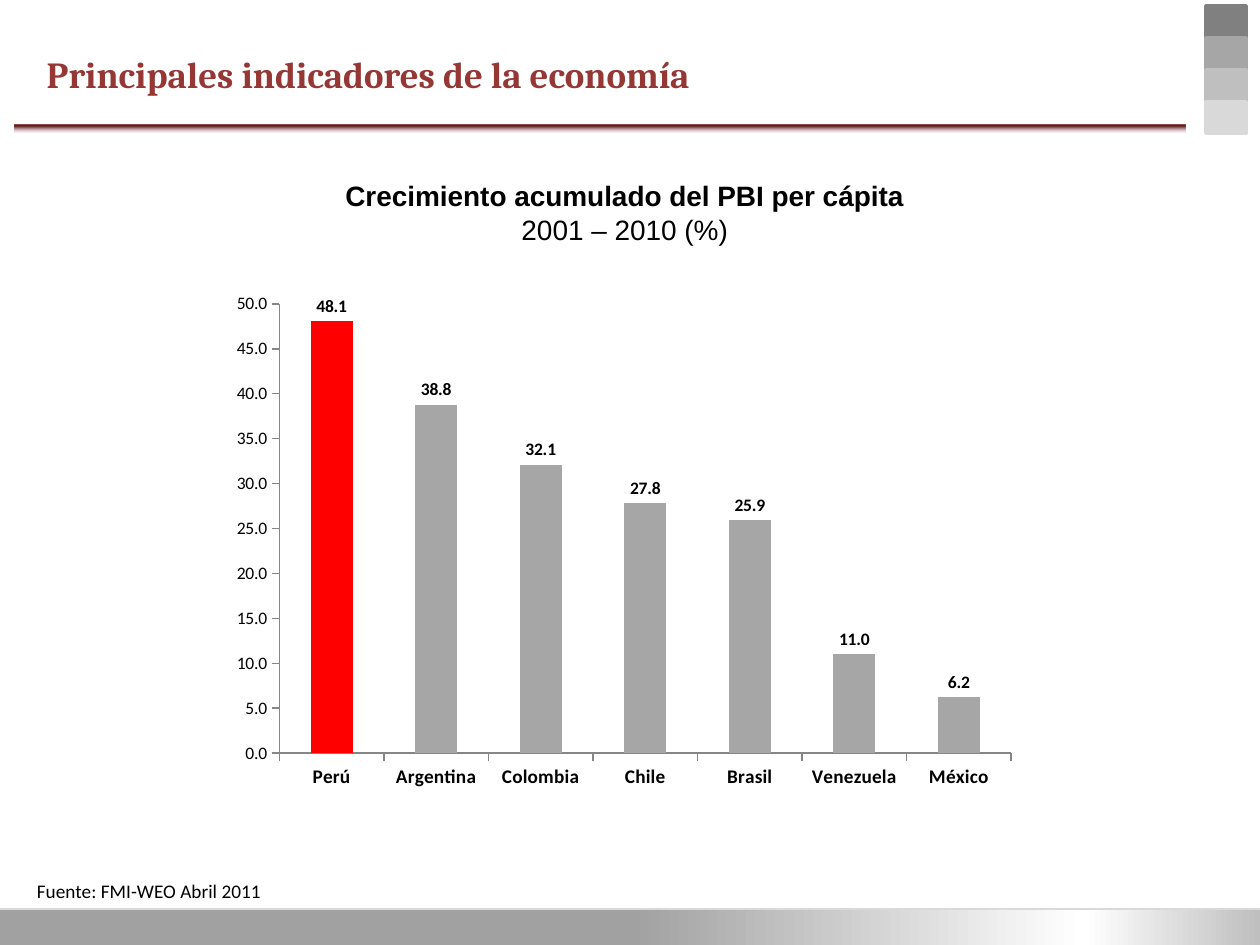
from lxml import etree
from pptx import Presentation
from pptx import util as u
from pptx.chart.data import CategoryChartData
from pptx.dml.color import RGBColor
from pptx.enum import chart as kinds, shapes, text
from pptx.oxml import parse_xml
from pptx.oxml.ns import nsdecls, qn

COLORS = {
    "text": "000000", "title": "953735", "peru": "FF0000", "bar": "A6A6A6",
    "axis": "868686", "rule": "D9D9D9",
}
SQUARES = ["808080", "A6A6A6", "BFBFBF", "D9D9D9"]
FOOTER_STOPS = [(50, "A1A1A1", 100), (86, "FFFFFF", 100), (100, "BFBFBF", 100)]
TITLE_STOPS = [(23, "632523", 100), (97, "FFEBFA", 43), (100, "85C2FF", 100)]
GROWTH = {
    "Perú": 48.1, "Argentina": 38.8, "Colombia": 32.1, "Chile": 27.8,
    "Brasil": 25.9, "Venezuela": 11.0, "México": 6.2,
}
PLOT_AREA = {"x": 0.07, "y": 0.04, "w": 0.91, "h": 0.87}


def rgb(name):
    return RGBColor.from_string(COLORS.get(name, name))


class SlideBuilder:
    def __init__(self, slide):
        self.slide = slide

    def style(self, font, size, face, color="text", bold=False):
        font.size, font.name, font.bold = u.Pt(size), face, bold
        font.color.rgb = rgb(color)

    def place(self, shape, left, top, width, height):
        shape.left, shape.top = u.Pt(left), u.Pt(top)
        shape.width, shape.height = u.Pt(width), u.Pt(height)

    def rectangle(self, left, top, width, height):
        shape = self.slide.shapes.add_shape(
            shapes.MSO_SHAPE.RECTANGLE, *map(u.Pt, (left, top, width, height)))
        shape.shadow.inherit = False
        shape.line.fill.background()
        return shape

    def square(self, left, top, width, height, color):
        shape = self.rectangle(left, top, width, height)
        shape.fill.solid()
        shape.fill.fore_color.rgb = rgb(color)
        shape.line.color.rgb = rgb(color)
        shape.line.width = u.Pt(2)

    def gradient_bar(self, left, top, width, height, stops, angle):
        shape = self.rectangle(left, top, width, height)
        shape.fill.gradient()
        properties = shape.fill._xPr
        marks = "".join(
            f'<a:gs pos="{position * 1000}"><a:srgbClr val="{color}">'
            f'<a:alpha val="{alpha * 1000}"/></a:srgbClr></a:gs>'
            for position, color, alpha in stops)
        gradient = parse_xml(
            f'<a:gradFill {nsdecls("a")} rotWithShape="1"><a:gsLst>{marks}</a:gsLst>'
            f'<a:lin ang="{angle * 60000}" scaled="0"/></a:gradFill>')
        properties.replace(properties.find(qn("a:gradFill")), gradient)

    def line(self, left, top, right, bottom, color, weight):
        line = self.slide.shapes.add_connector(
            shapes.MSO_CONNECTOR.STRAIGHT, *map(u.Pt, (left, top, right, bottom)))
        line.line.color.rgb = rgb(color)
        line.line.width = u.Pt(weight)
        etree.SubElement(line._element.spPr, qn("a:effectLst"))

    def title(self, words, left, top, width, height):
        box = self.slide.shapes.title
        self.place(box, left, top, width, height)
        frame = box.text_frame
        frame.text = words
        frame.vertical_anchor = text.MSO_ANCHOR.TOP
        frame.auto_size = text.MSO_AUTO_SIZE.NONE
        para = frame.paragraphs[0]
        para.alignment = text.PP_ALIGN.LEFT
        self.style(para.font, 21, "Cambria", "title", True)

    def text_box(self, left, top, width, height, lines, size, face, align):
        box = self.slide.shapes.add_textbox(*map(u.Pt, (left, top, width, height)))
        frame = box.text_frame
        frame.word_wrap = True
        for index, (words, bold) in enumerate(lines):
            para = frame.add_paragraph() if index else frame.paragraphs[0]
            para.text = words
            para.alignment = align
            self.style(para.font, size, face, bold=bold)

    def column_chart(self, left, top, width, height, values):
        data = CategoryChartData(number_format="0.0")
        data.categories = list(values)
        data.add_series("Series 1", list(values.values()))
        chart = self.slide.shapes.add_chart(
            kinds.XL_CHART_TYPE.COLUMN_CLUSTERED,
            *map(u.Pt, (left, top, width, height)), data).chart
        chart.has_legend = chart.has_title = False
        self.style(chart.font, 10, "Calibri")
        self.style(chart.category_axis.tick_labels.font, 11, "Calibri", bold=True)
        for axis in (chart.category_axis, chart.value_axis):
            axis.has_major_gridlines = False
            axis.major_tick_mark = kinds.XL_TICK_MARK.OUTSIDE
            axis.format.line.color.rgb = rgb("axis")
        value_axis = chart.value_axis
        value_axis.minimum_scale, value_axis.maximum_scale = 0, 50
        value_axis.major_unit = 5
        value_axis.tick_labels.number_format = "0.0"
        value_axis.tick_labels.number_format_is_linked = False

        plot = chart.plots[0]
        plot.gap_width = 150
        plot.vary_by_categories = False
        series = plot.series[0]
        for fill, color in ((series.format.fill, "bar"),
                            (series.points[0].format.fill, "peru")):
            fill.solid()
            fill.fore_color.rgb = rgb(color)
        labels = series.data_labels
        labels.show_value = True
        labels.number_format, labels.number_format_is_linked = "0.0", False
        labels.position = kinds.XL_LABEL_POSITION.OUTSIDE_END
        self.style(labels.font, 10, "Calibri", bold=True)

        area = chart._chartSpace.chart.plotArea
        for old in area.findall(qn("c:layout")):
            area.remove(old)
        sizes = "".join(f'<c:{key} val="{share}"/>' for key, share in PLOT_AREA.items())
        area.insert(0, parse_xml(
            f'<c:layout {nsdecls("c")}><c:manualLayout><c:layoutTarget val="inner"/>'
            f'<c:xMode val="edge"/><c:yMode val="edge"/>{sizes}'
            f'</c:manualLayout></c:layout>'))


def main():
    deck = Presentation()
    deck.slide_width, deck.slide_height = u.Pt(720), u.Pt(540)
    page = SlideBuilder(deck.slides.add_slide(deck.slide_layouts[5]))

    page.gradient_bar(0, 519, 720, 21, FOOTER_STOPS, 0)
    page.line(0, 519.5, 720, 519.5, "rule", 0.75)
    for index, color in enumerate(SQUARES):
        page.square(689, 3.5 + index * 18.2, 23, 18, color)
    page.gradient_bar(8.5, 71.5, 669, 4.5, TITLE_STOPS, 90)

    page.title("Principales indicadores de la economía", 19.5, 26, 527, 45)
    page.column_chart(127.5, 162, 459.5, 295, GROWTH)
    page.text_box(
        178.5, 98.5, 357, 46,
        [("Crecimiento acumulado del PBI per cápita", True), ("2001 – 2010 (%)", False)],
        16, "Arial", text.PP_ALIGN.CENTER)
    page.text_box(
        14, 499, 209.5, 21, [("Fuente: FMI-WEO Abril 2011", False)],
        11, "Calibri", text.PP_ALIGN.LEFT)
    deck.save("out.pptx")


if __name__ == "__main__":
    main()
